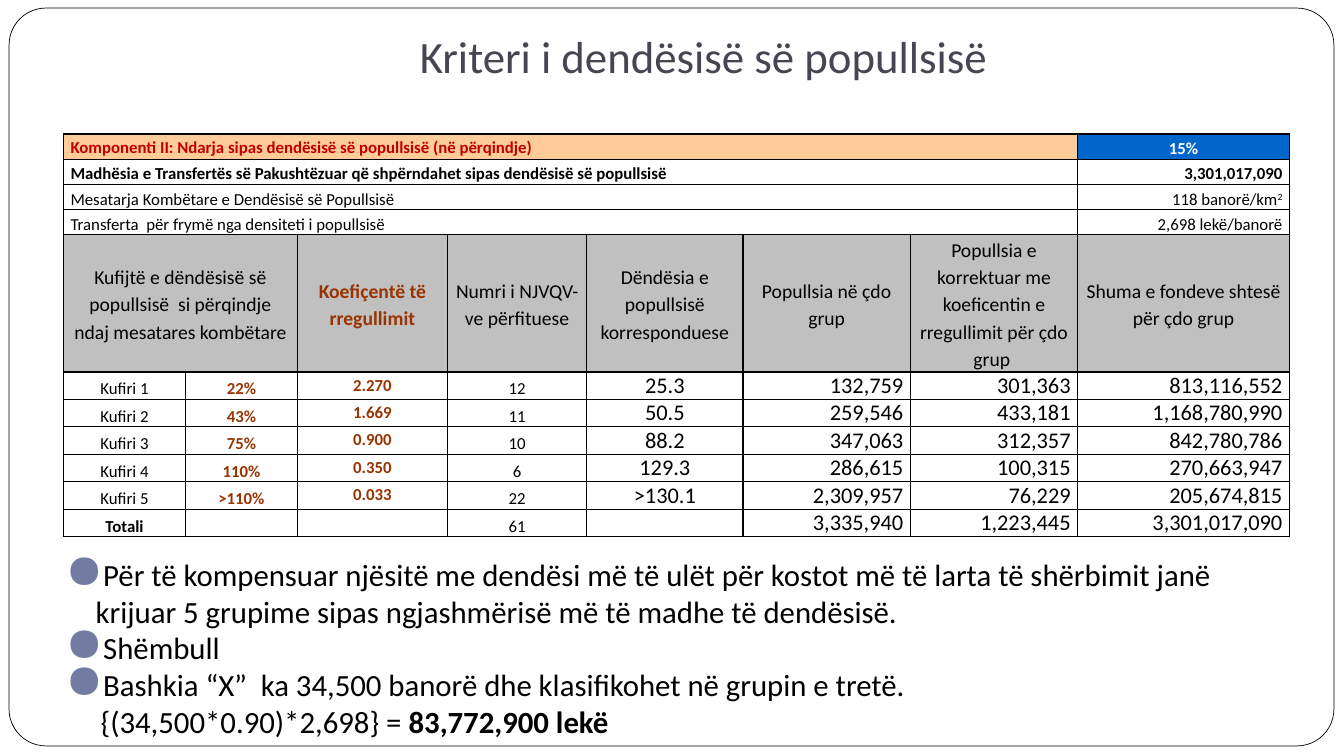
from lxml import etree
from pptx import Presentation
from pptx.dml.color import RGBColor
from pptx.enum.shapes import MSO_SHAPE as Shape
from pptx.enum.text import MSO_ANCHOR as Anchor, MSO_AUTO_SIZE as AutoSize, PP_ALIGN as Align
from pptx.oxml.ns import qn
from pptx.util import Inches, Pt

FONT = "Calibri"
BLACK, WHITE, BROWN, GREY = "000000", "FFFFFF", "993300", "C0C0C0"
LAST_COLUMN = 7

COLUMN_WIDTHS = [1.21, 1.11, 1.49, 1.38, 1.55, 1.66, 1.66, 2.1]
ROW_HEIGHTS = [0.25] * 4 + [1.36] + [0.27] * 6

SUMMARY = [
    ("Komponenti II: Ndarja sipas dendësisë së popullsisë (në përqindje)", "15%"),
    ("Madhësia e Transfertës së Pakushtëzuar që shpërndahet sipas dendësisë së popullsisë",
     "3,301,017,090"),
    ("Mesatarja Kombëtare e Dendësisë së Popullsisë", "118 banorë/km"),
    ("Transferta  për frymë nga densiteti i popullsisë", "2,698 lekë/banorë"),
]
HEADINGS = {
    0: "Kufijtë e dëndësisë së popullsisë  si përqindje ndaj mesatares kombëtare",
    2: "Koefiçentë të rregullimit",
    3: "Numri i NJVQV-ve përfituese",
    4: "Dëndësia e popullsisë korresponduese",
    5: "Popullsia në çdo grup",
    6: "Popullsia e korrektuar me koeficentin e rregullimit për çdo grup ",
    7: "Shuma e fondeve shtesë për çdo grup",
}
GROUPS = [
    ("Kufiri 1", "22%", "2.270", "12", "25.3", "132,759", "301,363", "813,116,552"),
    ("Kufiri 2", "43%", "1.669", "11", "50.5", "259,546", "433,181", "1,168,780,990"),
    ("Kufiri 3", "75%", "0.900", "10", "88.2", "347,063", "312,357", "842,780,786"),
    ("Kufiri 4", "110%", "0.350", "6", "129.3", "286,615", "100,315", "270,663,947"),
    ("Kufiri 5", ">110%", "0.033", "22", ">130.1", "2,309,957", "76,229", "205,674,815"),
    ("Totali", "", "", "61", "", "3,335,940", "1,223,445", "3,301,017,090"),
]
NOTES = [
    "Për të kompensuar njësitë me dendësi më të ulët për kostot më të larta të shërbimit "
    "janë krijuar 5 grupime sipas ngjashmërisë më të madhe të dendësisë.",
    "Shëmbull",
    "Bashkia “X”  ka 34,500 banorë dhe klasifikohet në grupin e tretë.",
]


def rgb(color):
    """Turn a hex string into a colour."""
    return RGBColor.from_string(color)


def style_runs(paragraph, size, color=BLACK, bold=False):
    """Format every run of a paragraph."""
    for run in paragraph.runs:
        run.font.name, run.font.size, run.font.bold = FONT, Pt(size), bold
        run.font.color.rgb = rgb(color)


def add_frame(slide):
    """Draw the rounded page frame behind everything else."""
    frame = slide.shapes.add_shape(
        Shape.ROUNDED_RECTANGLE, Inches(0.09), Inches(0.08), Inches(13.14), Inches(7.32))
    frame.adjustments[0] = 0.05
    frame.shadow.inherit = False
    frame.fill.solid()
    frame.fill.fore_color.rgb = rgb(WHITE)
    frame.line.color.rgb = rgb(BLACK)
    frame.line.width = Pt(0.5)
    slide.shapes._spTree.insert(2, frame._element)


def set_title(slide, wording):
    """Place and format the title placeholder."""
    title = slide.shapes.title
    title.left, title.top = Inches(2.17), Inches(0.3)
    title.width, title.height = Inches(9.62), Inches(0.62)
    frame = title.text_frame
    frame.text = wording
    frame.auto_size = AutoSize.NONE
    frame.vertical_anchor = Anchor.BOTTOM
    frame.margin_bottom = Inches(0.1)
    frame.paragraphs[0].alignment = Align.CENTER
    style_runs(frame.paragraphs[0], 32, "464653")


def add_borders(cell):
    """Give a cell thin black lines on all sides."""
    properties = cell._tc.get_or_add_tcPr()
    for side in ("a:lnL", "a:lnR", "a:lnT", "a:lnB"):
        line = etree.SubElement(properties, qn(side), w=str(Pt(1)))
        fill = etree.SubElement(line, qn("a:solidFill"))
        etree.SubElement(fill, qn("a:srgbClr"), val=BLACK)


def fill_cell(cell, wording, size=12, color=BLACK, bold=False, align=Align.CENTER,
              anchor=Anchor.BOTTOM, spacing=1.15, fill=None):
    """Write and format one table cell."""
    cell.text = wording
    cell.vertical_anchor = anchor
    paragraph = cell.text_frame.paragraphs[0]
    paragraph.alignment, paragraph.line_spacing = align, spacing
    style_runs(paragraph, size, color, bold)
    if not wording:
        etree.SubElement(paragraph._p, qn("a:endParaRPr"), sz=str(size * 100))
    if fill:
        cell.fill.solid()
        cell.fill.fore_color.rgb = rgb(fill)


def fill_summary(table):
    """Write the four merged rows at the top of the table."""
    for row, (label, value) in enumerate(SUMMARY):
        table.cell(row, 0).merge(table.cell(row, LAST_COLUMN - 1))
        first = row == 0
        bold = row < 2
        fill_cell(table.cell(row, 0), label, bold=bold, align=Align.LEFT,
                  color="C00000" if first else BLACK, fill="FFCC99" if first else None,
                  anchor=Anchor.MIDDLE if first else Anchor.BOTTOM)
        fill_cell(table.cell(row, LAST_COLUMN), value, bold=bold,
                  color=WHITE if first else BLACK, fill="0066CC" if first else None,
                  align=Align.CENTER if first else Align.RIGHT,
                  spacing=1.0 if row == 1 else 1.15)
    density = table.cell(2, LAST_COLUMN).text_frame.paragraphs[0]
    exponent = density.add_run()
    exponent.text = "2"
    style_runs(density, 12)
    exponent._r.get_or_add_rPr().set("baseline", "30000")


def fill_headings(table):
    """Write the grey heading row."""
    row = len(SUMMARY)
    table.cell(row, 0).merge(table.cell(row, 1))
    for column, heading in HEADINGS.items():
        accent = column == 2
        fill_cell(table.cell(row, column), heading, 14, BROWN if accent else BLACK, accent,
                  anchor=Anchor.MIDDLE, fill=GREY)


def fill_groups(table):
    """Write the density groups and the total."""
    for row, group in enumerate(GROUPS, len(SUMMARY) + 1):
        for column, value in enumerate(group):
            accent = column in (1, 2)
            large = column > 3 and value
            fill_cell(table.cell(row, column), value, 16 if large else 12,
                      BROWN if accent else BLACK, accent or value == "Totali",
                      Align.RIGHT if column > 4 else Align.CENTER,
                      Anchor.TOP if column == 2 or column > 3 else Anchor.BOTTOM,
                      1.15 if column < 3 else 1.0)


def add_density_table(slide):
    """Add the table of density groups."""
    table = slide.shapes.add_table(
        len(ROW_HEIGHTS), len(COLUMN_WIDTHS), Inches(0.63), Inches(1.33),
        Inches(sum(COLUMN_WIDTHS)), Inches(sum(ROW_HEIGHTS))).table
    table.first_row = table.horz_banding = False
    for column, width in zip(table.columns, COLUMN_WIDTHS):
        column.width = Inches(width)
    for row, height in zip(table.rows, ROW_HEIGHTS):
        row.height = Inches(height)
    for cell in table.iter_cells():
        cell.margin_left = cell.margin_right = Inches(0.07)
        cell.margin_top = cell.margin_bottom = 0
        add_borders(cell)
        cell.fill.background()
    fill_summary(table)
    fill_headings(table)
    fill_groups(table)


def add_bullet(paragraph):
    """Give a paragraph a large round bullet and a hanging indent."""
    properties = paragraph._p.get_or_add_pPr()
    properties.set("marL", str(Inches(0.3)))
    properties.set("indent", str(-Inches(0.3)))
    color = etree.SubElement(properties, qn("a:buClr"))
    etree.SubElement(color, qn("a:srgbClr"), val="727CA3")
    etree.SubElement(properties, qn("a:buSzPct"), val="155000")
    etree.SubElement(properties, qn("a:buChar"), char="●")


def add_notes(slide):
    """Add the explanation and the worked example below the table."""
    frame = slide.shapes.add_textbox(
        Inches(0.55), Inches(5.46), Inches(12.24), Inches(1.87)).text_frame
    frame.word_wrap = True
    frame.text = "\n".join(NOTES)
    for paragraph in frame.paragraphs:
        style_runs(paragraph, 22)
        add_bullet(paragraph)
    formula = frame.add_paragraph()
    formula.text = "{(34,500*0.90)*2,698} = "
    result = formula.add_run()
    result.text = "83,772,900 lekë"
    style_runs(formula, 22)
    result.font.bold = True
    formula._p.get_or_add_pPr().set("marL", str(Inches(0.35)))


def main():
    """Build the slide and save it."""
    deck = Presentation()
    deck.slide_width, deck.slide_height = Inches(13.33), Inches(7.5)
    slide = deck.slides.add_slide(deck.slide_layouts[5])
    add_frame(slide)
    set_title(slide, "Kriteri i dendësisë së popullsisë")
    add_density_table(slide)
    add_notes(slide)
    deck.save("out.pptx")


if __name__ == "__main__":
    main()
